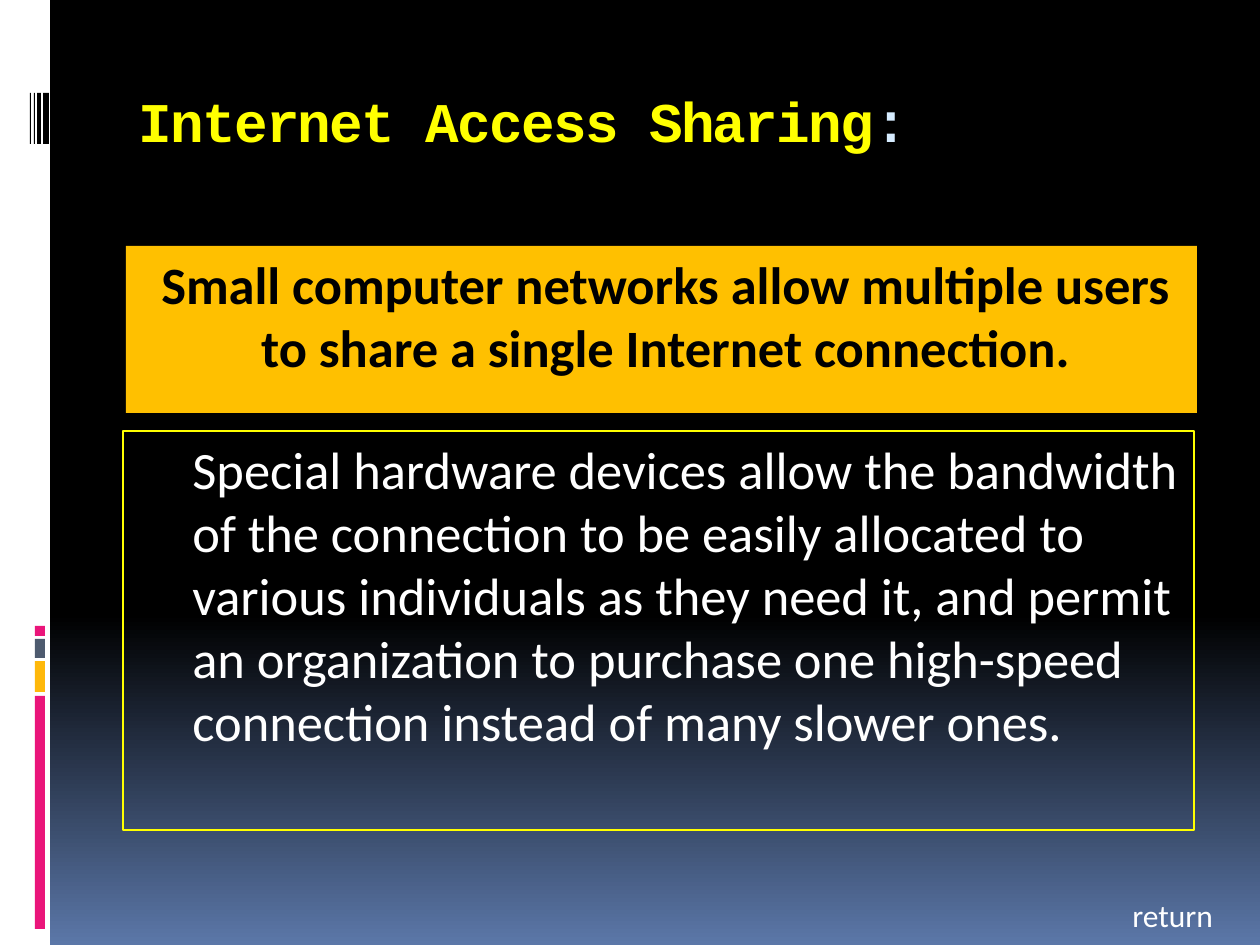
"""Build the Internet Access Sharing slide."""
from pptx import Presentation
from pptx.dml.color import RGBColor
from pptx.enum.shapes import MSO_SHAPE
from pptx.enum.text import MSO_ANCHOR, PP_ALIGN
from pptx.util import Emu, Pt

PX = 914400 / 126


def px(*values):
    return [Emu(round(v * PX)) for v in values]


def color(target, value):
    if hasattr(target, "solid"):
        target.solid()
        target = target.fore_color
    target.rgb = RGBColor.from_string(value)


prs = Presentation()
prs.slide_width, prs.slide_height = px(1260, 945)
s = prs.slides.add_slide(prs.slide_layouts[6])

fill = s.background.fill
fill.gradient()
fill.gradient_angle = 270
for stop, position, value in zip(fill.gradient_stops, (0.65, 1), ("000000", "5B77A8")):
    stop.position = position
    color(stop.color, value)

bars = [
    (0, 0, 50, 945, "FFFFFF"),
    (35, 696, 10, 233, "EA157A"),
    (35, 661, 10, 31, "FEB80A"),
    (35, 639, 10, 19, "4E5B6F"),
    (35, 626, 10, 10, "EA157A"),
]
bars += [(x, 93, w, 51, "000000") for x, w in ((43, 6), (37, 4), (34, 1), (30, 1))]
for *box, value in bars:
    sp = s.shapes.add_shape(MSO_SHAPE.RECTANGLE, *px(*box))
    sp.shadow.inherit = False
    color(sp.fill, value)
    sp.line.fill.background()

title = s.shapes.add_textbox(*px(126, 70, 1071, 126))
lead = s.shapes.add_shape(MSO_SHAPE.RECTANGLE, *px(126, 246, 1071, 167))
link = s.shapes.add_textbox(*px(1120, 890, 126, 50))
detail = s.shapes.add_shape(MSO_SHAPE.RECTANGLE, *px(123, 431, 1071, 399))

color(lead.fill, "FFC000")
lead.line.fill.background()
detail.fill.background()
color(detail.line.fill, "FFFF00")
detail.line.width = Pt(0.75)

texts = [
    (title, ["Internet Access Sharing", ":"], "Courier New", 32, True, ["FFFF00", "D6ECFF"]),
    (lead, ["Small computer networks allow multiple users to share a single Internet connection."],
     "Calibri", 30, True, ["000000"]),
    (link, ["return"], "Calibri", 18, False, ["FFFFFF"]),
    (detail, ["Special hardware devices allow the bandwidth of the connection to be easily "
              "allocated to various individuals as they need it, and permit an organization to "
              "purchase one high-speed connection instead of many slower ones."],
     "Calibri", 30, False, ["FFFFFF"]),
]
for sp, words, font, size, bold, colors in texts:
    tf = sp.text_frame
    tf.word_wrap = True
    tf.vertical_anchor = MSO_ANCHOR.TOP
    p = tf.paragraphs[0]
    p.alignment = PP_ALIGN.LEFT
    for word, value in zip(words, colors):
        r = p.add_run()
        r.text = word
        r.font.name, r.font.size, r.font.bold = font, Pt(size), bold
        color(r.font.color, value)

title.text_frame.margin_top = px(17)[0]
for r in title.text_frame.paragraphs[0].runs:
    r.font._element.set("spc", "-100")

for sp, indent in ((lead, 9), (detail, 57)):
    sp.shadow.inherit = False
    p = sp.text_frame.paragraphs[0]
    p.space_before = Pt(7)
    p._p.get_or_add_pPr().set("marL", str(px(indent)[0]))
lead.text_frame.paragraphs[0].alignment = PP_ALIGN.CENTER

prs.save("out.pptx")
